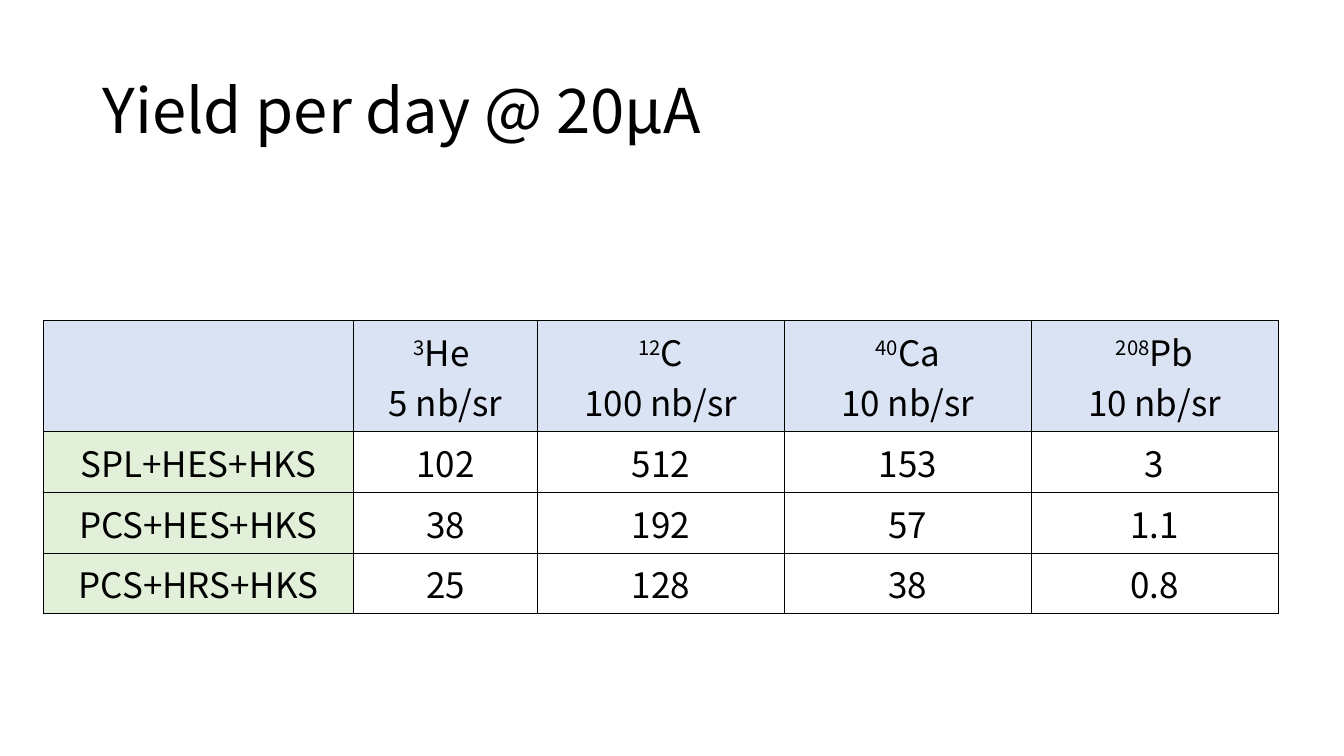
from lxml import etree
from pptx import Presentation
from pptx import util as u
from pptx.dml.color import RGBColor
from pptx.enum import text
from pptx.oxml import ns

FONT = "Noto Sans CJK JP"
BLACK, BLUE, GREEN = "000000", "DAE3F3", "E2F0D9"


def add_run(p, content, size):
    r = p.add_run()
    r.text = content
    r.font.size = u.Pt(size)
    r.font.name = FONT
    r.font.color.rgb = RGBColor.from_string(BLACK)
    etree.SubElement(r.font._element, ns.qn("a:ea"), typeface=FONT)
    return r


def style_cell(cell, color):
    cell.vertical_anchor = text.MSO_ANCHOR.MIDDLE
    if color:
        cell.fill.solid()
        cell.fill.fore_color.rgb = RGBColor.from_string(color)
    else:
        cell.fill.background()
    tc_pr = cell._tc.get_or_add_tcPr()
    for i, side in enumerate(("lnL", "lnR", "lnT", "lnB")):
        ln = etree.Element(ns.qn(f"a:{side}"), w=str(u.Pt(1)))
        fill = etree.SubElement(ln, ns.qn("a:solidFill"))
        etree.SubElement(fill, ns.qn("a:srgbClr"), val=BLACK)
        tc_pr.insert(i, ln)


prs = Presentation()
prs.slide_width, prs.slide_height = u.Pt(960), u.Pt(540)
s = prs.slides.add_slide(prs.slide_layouts[5])

title = s.shapes.title
title.left, title.top = u.Pt(66), u.Pt(28.75)
title.width, title.height = u.Pt(828), u.Pt(104.4)
tf = title.text_frame
tf.auto_size = text.MSO_AUTO_SIZE.NONE
tf.vertical_anchor = text.MSO_ANCHOR.MIDDLE
p = tf.paragraphs[0]
p.alignment = text.PP_ALIGN.LEFT
p.line_spacing = 0.9
add_run(p, "Yield per day @ 20μA", 44)

targets = [
    ("3", "He ", "5 nb/sr"),
    ("12", "C", "100 nb/sr"),
    ("40", "Ca", "10 nb/sr"),
    ("208", "Pb", "10 nb/sr"),
]
yields = [
    ("SPL+HES+HKS", "102", "512", "153", "3"),
    ("PCS+HES+HKS", "38", "192", "57", "1.1"),
    ("PCS+HRS+HKS", "25", "128", "38", "0.8"),
]
widths = [221.6, 131.2, 176.4, 176.4, 176.4]

frame = s.shapes.add_table(4, 5, u.Pt(31), u.Pt(229), u.Pt(882), u.Pt(178.6))
table = frame.table
table.first_row = table.horz_banding = False
for column, width in zip(table.columns, widths):
    column.width = u.Pt(width)
for row in table.rows:
    row.height = u.Pt(29.5)

style_cell(table.cell(0, 0), BLUE)
for c, (mass, symbol, cross_section) in enumerate(targets, 1):
    cell = table.cell(0, c)
    style_cell(cell, BLUE)
    p = cell.text_frame.paragraphs[0]
    p.alignment = text.PP_ALIGN.CENTER
    r = add_run(p, mass, 25)
    r.font._element.set("baseline", "30000")
    add_run(p, symbol, 25)
    p = cell.text_frame.add_paragraph()
    p.alignment = text.PP_ALIGN.CENTER
    add_run(p, cross_section, 25)

for i, values in enumerate(yields, 1):
    for c, value in enumerate(values):
        cell = table.cell(i, c)
        style_cell(cell, GREEN if c == 0 else None)
        p = cell.text_frame.paragraphs[0]
        p.alignment = text.PP_ALIGN.CENTER
        add_run(p, value, 25)

prs.save("out.pptx")
